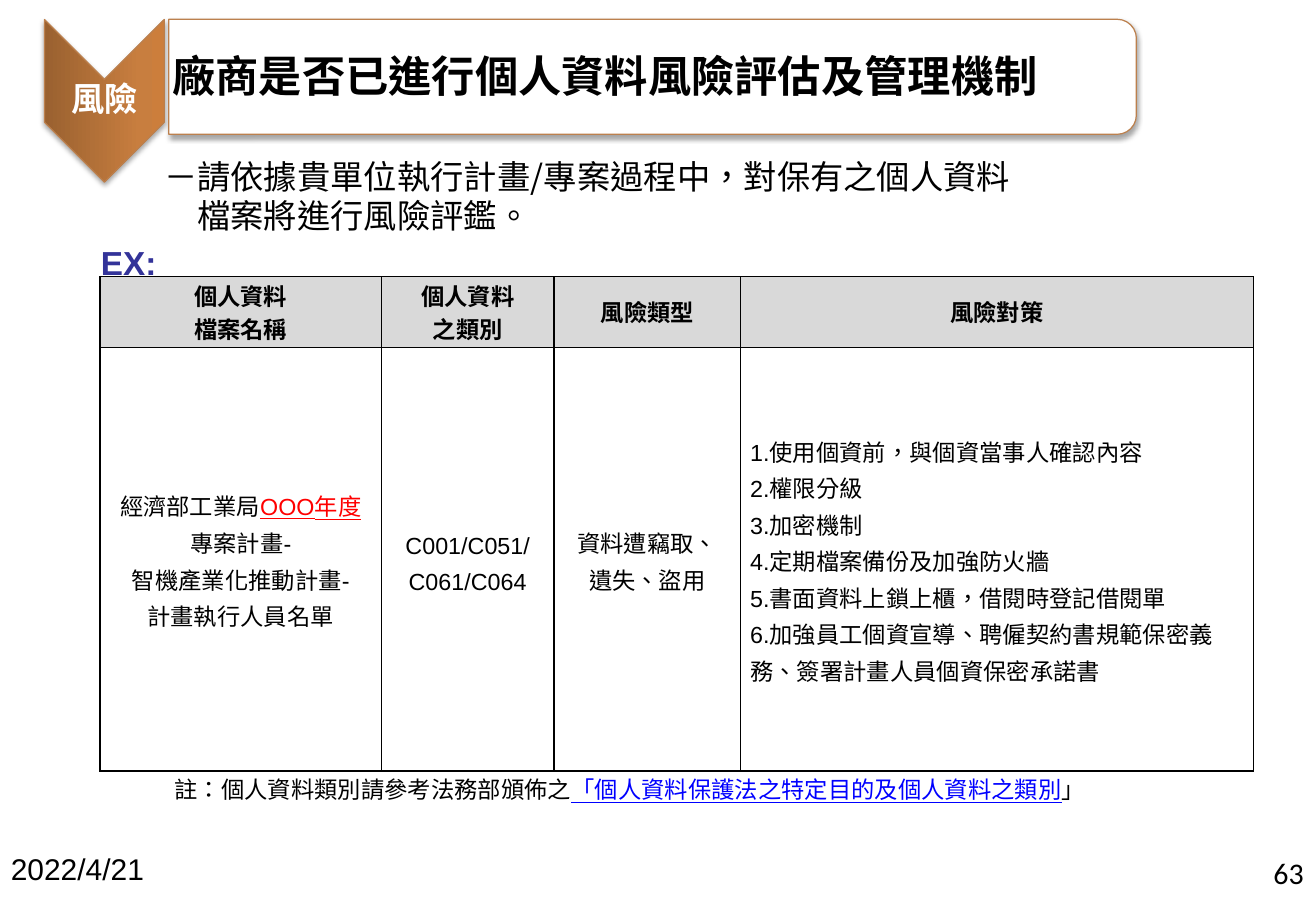
from lxml import etree
from pptx import Presentation
from pptx.dml.color import RGBColor
from pptx.enum.lang import MSO_LANGUAGE_ID
from pptx.enum.shapes import MSO_SHAPE
from pptx.enum.text import MSO_ANCHOR, PP_ALIGN
from pptx.oxml import parse_xml
from pptx.oxml.ns import qn
from pptx.util import Cm, Pt

LEFT, CENTER, RIGHT = PP_ALIGN.LEFT, PP_ALIGN.CENTER, PP_ALIGN.RIGHT
TOP, MIDDLE = MSO_ANCHOR.TOP, MSO_ANCHOR.MIDDLE
CHEVRON, ROUND_TOP = MSO_SHAPE.CHEVRON, MSO_SHAPE.ROUND_2_SAME_RECTANGLE
CHINESE = MSO_LANGUAGE_ID.TRADITIONAL_CHINESE

BLACK = RGBColor(0x00, 0x00, 0x00)
WHITE = RGBColor(0xFF, 0xFF, 0xFF)
RED = RGBColor(0xFF, 0x00, 0x00)
BLUE = RGBColor(0x00, 0x00, 0xFF)
INDIGO = RGBColor(0x33, 0x33, 0x99)
BRONZE = RGBColor(0xBC, 0x80, 0x4D)
GREY = RGBColor(0xD9, 0xD9, 0xD9)
BRONZE_STOPS = [(0, "9A6130"), (80, "C87E3F"), (100, "CC7E3C")]
SANS = "Noto Sans CJK SC"
NS = 'xmlns:a="http://schemas.openxmlformats.org/drawingml/2006/main"'

TITLE = ["廠商是否已進行個人資料風險評估及管理機制"]
TAG = ["風險"]
INTRO = ["－請依據貴單位執行計畫/專案過程中，對保有之個人資料", "　檔案將進行風險評鑑。"]
EXAMPLE = ["EX:"]
NOTE = [["註：個人資料類別請參考法務部頒佈之",
         ("「個人資料保護法之特定目的及個人資料之類別", BLUE), "」"]]
DATE = ["2022/4/21"]
PAGE = ["63"]
HEADER = [["個人資料", "檔案名稱"], ["個人資料", "之類別"], ["風險類型"], ["風險對策"]]
RISKS = [
    [["經濟部工業局", ("OOO年度", RED)], "專案計畫-", "智機產業化推動計畫-", "計畫執行人員名單"],
    ["C001/C051/", "C061/C064"],
    ["資料遭竊取、", "遺失、盜用"],
    ["1.使用個資前，與個資當事人確認內容", "2.權限分級", "3.加密機制",
     "4.定期檔案備份及加強防火牆", "5.書面資料上鎖上櫃，借閱時登記借閱單",
     "6.加強員工個資宣導、聘僱契約書規範保密義務、簽署計畫人員個資保密承諾書"],
]
COLUMNS = [5.97, 3.66, 3.96, 10.87]
ROWS = [1.5, 8.99]


def write(tf, lines, size=14, font=SANS, color=BLACK, bold=False, align=LEFT,
          spacing=None, indent=0, anchor=TOP):
    tf.word_wrap = True
    tf.vertical_anchor = anchor
    for i, line in enumerate(lines):
        p = tf.add_paragraph() if i else tf.paragraphs[0]
        p.alignment = align
        if spacing:
            p.line_spacing = spacing
        pPr = p._p.get_or_add_pPr()
        pPr.set("hangingPunct", "0")
        if indent:
            pPr.set("marL", str(Cm(indent)))
        for part in [line] if isinstance(line, str) else line:
            marked = isinstance(part, tuple)
            r = p.add_run()
            r.text, ink = part if marked else (part, color)
            r.font.size, r.font.name, r.font.bold = Pt(size), font, bold
            r.font.color.rgb = ink
            r.font.language_id = CHINESE
            if marked:
                r.font.underline = True
            ea = etree.SubElement(r._r.rPr, qn("a:ea"))
            ea.set("typeface", SANS)


def add_text(box, lines, inset=None, **fmt):
    tf = slide.shapes.add_textbox(*map(Cm, box)).text_frame
    if inset is not None:
        tf.margin_left = tf.margin_right = tf.margin_top = tf.margin_bottom = Cm(inset)
    write(tf, lines, **fmt)


def add_panel(kind, box):
    sp = slide.shapes.add_shape(kind, *map(Cm, box))
    sp.rotation = 90
    sp.fill.solid()
    sp.fill.fore_color.rgb = WHITE
    sp.line.color.rgb = BRONZE
    sp.line.width = Pt(0.75)
    sp.shadow.inherit = False
    sp._element.spPr.find(qn("a:effectLst")).append(parse_xml(
        f'<a:outerShdw {NS} blurRad="{Pt(3.1)}" dist="{Pt(1.8)}" dir="5400000" '
        'rotWithShape="0"><a:srgbClr val="000000"><a:alpha val="35000"/>'
        '</a:srgbClr></a:outerShdw>'))
    return sp


def set_gradient(sp, stops):
    marks = "".join(f'<a:gs pos="{pos * 1000}"><a:srgbClr val="{rgb}"/></a:gs>'
                    for pos, rgb in stops)
    spPr = sp._element.spPr
    spPr.replace(spPr.find(qn("a:solidFill")), parse_xml(
        f'<a:gradFill {NS} rotWithShape="1"><a:gsLst>{marks}</a:gsLst>'
        '<a:lin ang="16200000" scaled="0"/></a:gradFill>'))


def format_cell(cell, fill):
    cell.margin_left = cell.margin_right = Cm(0.2)
    cell.margin_top = cell.margin_bottom = 0
    cell.fill.solid()
    cell.fill.fore_color.rgb = fill
    cell.vertical_anchor = MIDDLE
    for i, side in enumerate(["lnL", "lnR", "lnT", "lnB"]):
        cell._tc.tcPr.insert(i, parse_xml(
            f'<a:{side} {NS} w="{Pt(1)}"><a:solidFill><a:srgbClr val="{BLACK}"/>'
            f'</a:solidFill></a:{side}>'))


prs = Presentation()
prs.slide_width, prs.slide_height = Cm(27.91), Cm(19.05)
slide = prs.slides.add_slide(prs.slide_layouts[5])

chevron = add_panel(CHEVRON, (0.49, 0.87, 3.45, 2.54))
set_gradient(chevron, BRONZE_STOPS)
add_text((0.95, 1.62, 2.54, 1.04), TAG, inset=0.03, size=20, color=WHITE, bold=True,
         align=CENTER, spacing=0.9, anchor=MIDDLE)

add_panel(ROUND_TOP, (12.62, -8.63, 2.44, 20.52))
title = slide.shapes.title
title.left, title.top, title.width, title.height = map(Cm, (3.4, 0.91, 21.41, 1.37))
write(title.text_frame, TITLE, size=26, bold=True)
slide.shapes._spTree.append(title._element)

add_text((1.96, 3.18, 22.1, 1.96), INTRO, size=20, indent=1.27)
add_text((0.57, 4.75, 24.77, 1.2), EXAMPLE, size=20, font="Arial", color=INDIGO,
         bold=True, spacing=1.3, indent=1.32)

frame = slide.shapes.add_table(len(ROWS), len(COLUMNS), Cm(2.12), Cm(5.87),
                               Cm(sum(COLUMNS)), Cm(sum(ROWS)))
table = frame.table
for column, width in zip(table.columns, COLUMNS):
    column.width = Cm(width)
for row, height in zip(table.rows, ROWS):
    row.height = Cm(height)
for i, texts in enumerate([HEADER, RISKS]):
    head = i == 0
    for j, lines in enumerate(texts):
        cell = table.cell(i, j)
        format_cell(cell, GREY if head else WHITE)
        last = j == len(COLUMNS) - 1
        write(cell.text_frame, lines, font="Arial", bold=head, anchor=MIDDLE,
              align=LEFT if last and not head else CENTER, spacing=Pt(20 if head else 22))

add_text((3.45, 16.33, 21.72, 0.86), NOTE, font="Times New Roman")
add_text((-0.02, 17.93, 5.36, 1.04), DATE, size=18, font="Arial")
add_text((22.54, 18.01, 5.36, 1.04), PAGE, size=18, font="Calibri", align=RIGHT)

prs.save("out.pptx")
